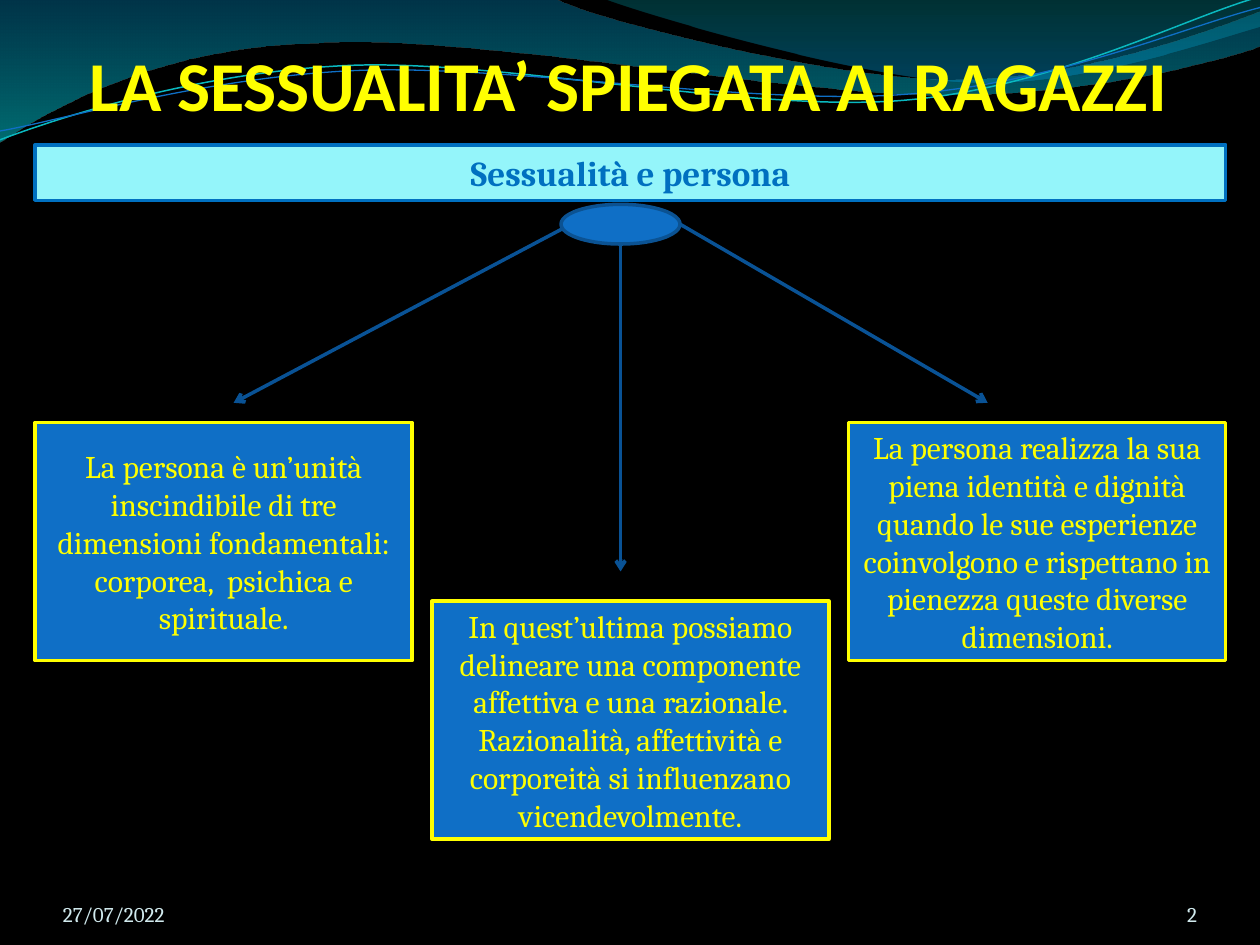
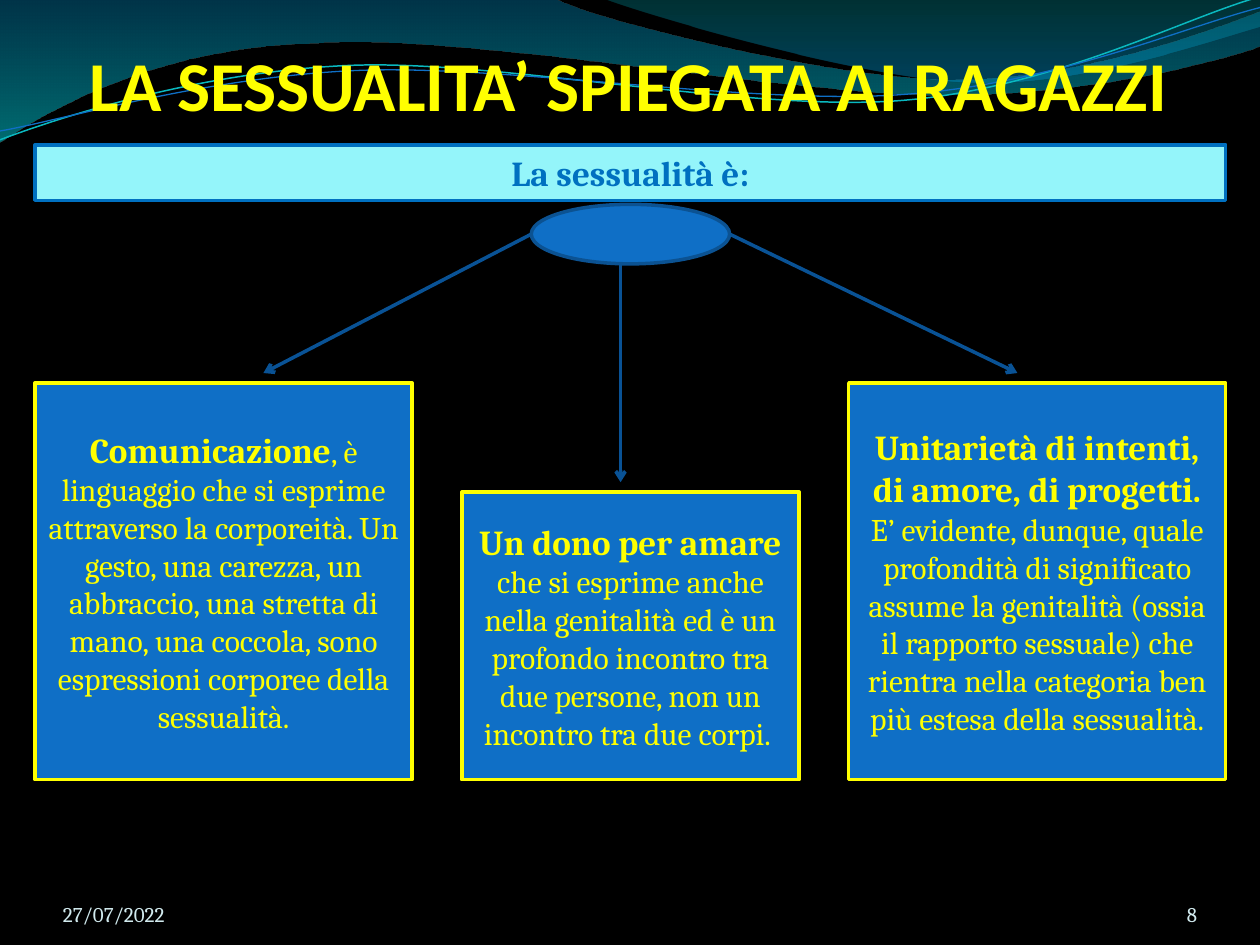
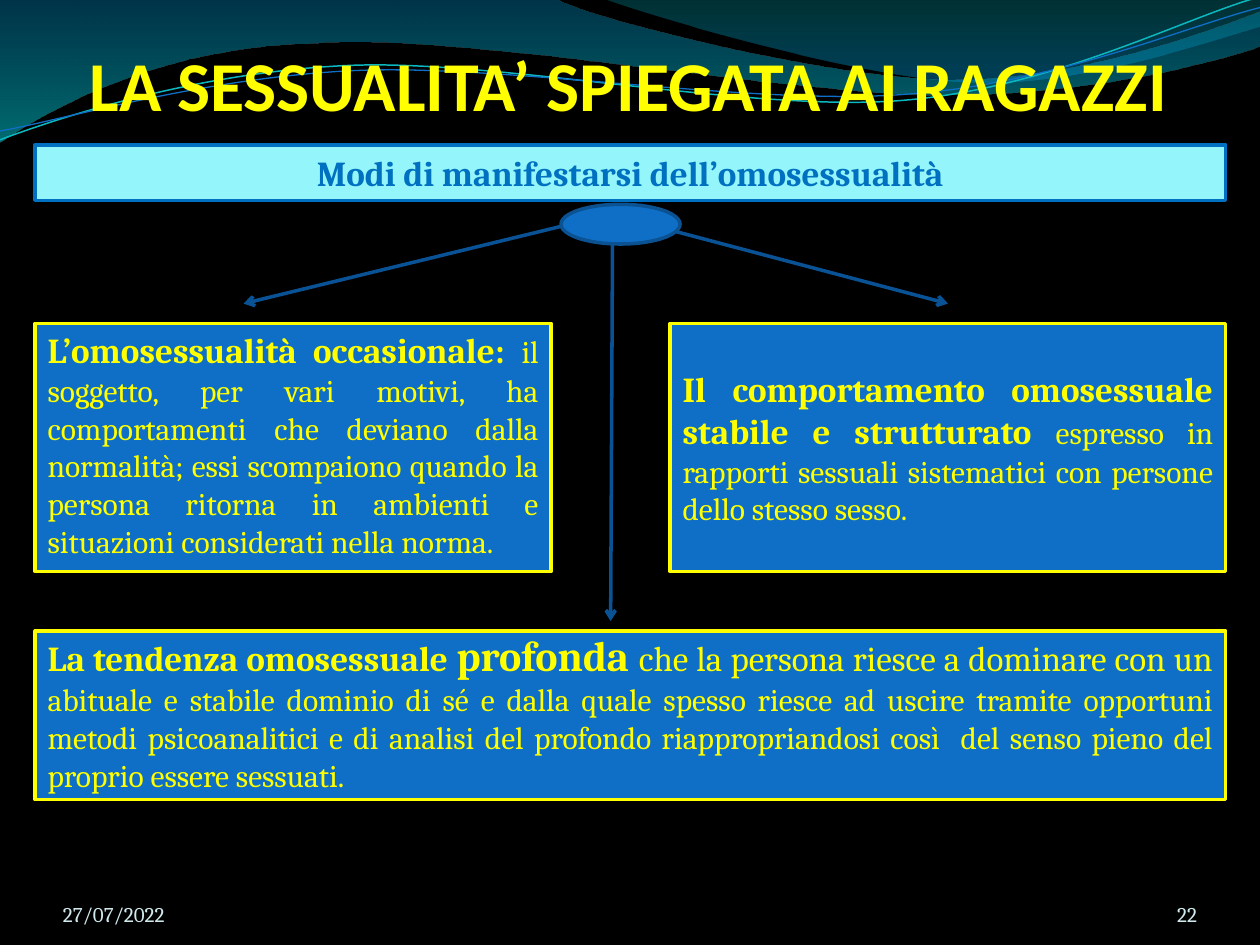
import dataclasses
import lxml.etree
import pptx
import pptx.dml.color
import pptx.enum.shapes
import pptx.enum.text
import pptx.oxml.ns
import pptx.util

SHAPE = pptx.enum.shapes.MSO_SHAPE
ALIGN = pptx.enum.text.PP_ALIGN
ANCHOR = pptx.enum.text.MSO_ANCHOR
qn = pptx.oxml.ns.qn
Inches = pptx.util.Inches
Pt = pptx.util.Pt


@dataclasses.dataclass(frozen=True)
class Theme:
    back: str = "000000"
    title: str = "FFFF00"
    foot: str = "D1EAEE"
    band: str = "94F5FA"
    edge: str = "0070C0"
    fill: str = "0F6FC6"
    rim: str = "0B5292"
    arrow: str = "095295"
    teal: str = "0AB8BF"
    head: str = "Calibri"
    body: str = "Cambria"
    huge: int = 40
    big: int = 24
    lead: int = 20
    text: int = 18
    small: int = 12
    line: int = 2


T = Theme()
CELL = pptx.util.Cm(0.4)
LEFT = pptx.util.Cm(0.71)
TOP = pptx.util.Cm(4.12)
COLS = 60

WAVES = [
    ([(0, 0), (4.4, -0.01), (4.76, 0.17, 6.64, 0.63, 7.58, 0.63),
      (8.53, 0.63, 9.58, 0.26, 10, 0.09), (10.01, 0.36),
      (9.83, 0.44, 8.7, 0.76, 7.46, 0.75), (6.22, 0.75, 3.82, 0.28, 2.57, 0.34),
      (1.29, 0.36, 0.46, 0.83, -0.01, 1.13), (0, 0)],
     [(0, "0074A1", 45), (1, "00C6CF", 55)]),
    ([(4.79, -0.01), (5.09, 0.11, 6.82, 0.62, 7.69, 0.65),
      (8.56, 0.69, 9.61, 0.32, 10, 0.21), (10, 0), (4.79, -0.01)],
     [(0, "00A1A9", 30), (0.8, "008BBF", 45)]),
]
CURVES = [
    ([(0, 1.11), (0.48, 0.93, 1.58, 0.57, 2.77, 0.52),
      (3.95, 0.47, 5.93, 0.89, 7.13, 0.8), (8.33, 0.71, 9.38, 0.15, 9.98, -0.02)],
     T.teal, 0.85),
    ([(0, 1.04), (0.47, 0.96, 1.64, 0.61, 2.83, 0.56),
      (4.03, 0.51, 5.97, 0.84, 7.17, 0.75), (8.36, 0.67, 9.41, 0.21, 10, 0.06)],
     T.fill, 0.75),
]


def rgb(code):
    return pptx.dml.color.RGBColor.from_string(code)


def spot(col, row):
    return LEFT + round(col * CELL), TOP + round(row * CELL)


def area(col, row, wide, high):
    return *spot(col, row), round(wide * CELL), round(high * CELL)


def trace(slide, parts, close):
    points = [(Inches(x), Inches(y)) for part in parts
              for x, y in zip(part[::2], part[1::2])]
    pen = slide.shapes.build_freeform(*points[0])
    pen.add_line_segments(points[1:], close=close)
    shape = pen.convert_to_shape()
    shape.shadow.inherit = False
    lines = iter(list(shape._element.spPr.iter(qn("a:lnTo"))))
    for part in parts[1:]:
        if len(part) == 6:
            first, *rest = next(lines), next(lines), next(lines)
            first.tag = qn("a:cubicBezTo")
            for line in rest:
                first.append(line[0])
                line.getparent().remove(line)
        else:
            next(lines)
    return shape


def wave(slide, parts, stops):
    shape = trace(slide, parts, True)
    shape.line.fill.background()
    shape.fill.gradient()
    shape.fill.gradient_angle = 270
    for stop, (place, color, _) in zip(shape.fill.gradient_stops, stops):
        stop.position = place
        stop.color.rgb = rgb(color)
    tints = list(shape._element.spPr.iter(qn("a:srgbClr")))
    for tint, (_, _, share) in zip(tints, stops):
        lxml.etree.SubElement(tint, qn("a:alpha")).set("val", str(share * 1000))
    return shape


def curve(slide, parts, color, width):
    shape = trace(slide, parts, False)
    shape.fill.background()
    shape.line.color.rgb = rgb(color)
    shape.line.width = Pt(width)
    return shape


def adorn(slide):
    shapes = [wave(slide, *item) for item in WAVES]
    shapes += [curve(slide, *item) for item in CURVES]
    for shape in shapes:
        slide.slide_layout.shapes._spTree.append(shape._element)


def write(shape, runs, color, align=ALIGN.CENTER, anchor=ANCHOR.MIDDLE, font=T.body):
    frame = shape.text_frame
    frame.word_wrap = True
    frame.vertical_anchor = anchor
    para = frame.paragraphs[0]
    para.alignment = align
    para.font.name = font
    para.font.color.rgb = rgb(color)
    if len(runs) == 1:
        para.font.size, para.font.bold = Pt(runs[0][1]), runs[0][2]
    for words, size, bold in runs:
        run = para.add_run()
        run.text = words
        if len(runs) > 1:
            run.font.size, run.font.bold = Pt(size), bold


def label(slide, place, words, size, color, align, font=T.body, bold=False):
    box = slide.shapes.add_textbox(*area(*place))
    frame = box.text_frame
    frame.margin_left = frame.margin_right = 0
    frame.margin_top = frame.margin_bottom = 0
    write(box, [(words, size, bold)], color, align, ANCHOR.BOTTOM, font)


def block(slide, kind, place, fill, edge):
    shape = slide.shapes.add_shape(kind, *area(*place))
    shape.shadow.inherit = False
    shape.fill.solid()
    shape.fill.fore_color.rgb = rgb(fill)
    shape.line.color.rgb = rgb(edge)
    shape.line.width = Pt(T.line)
    return shape


def card(slide, align, place, runs, base=0.05):
    shape = block(slide, SHAPE.RECTANGLE, place, T.fill, T.title)
    shape.text_frame.margin_bottom = Inches(base)
    write(shape, runs, T.title, align)


def arrow(slide, start, end):
    link = slide.shapes.add_connector(
        pptx.enum.shapes.MSO_CONNECTOR.STRAIGHT, *spot(*start), *spot(*end))
    link.line.color.rgb = rgb(T.arrow)
    link.line.width = Pt(T.line)
    lxml.etree.SubElement(link.line._get_or_add_ln(), qn("a:tailEnd")).set("type", "arrow")
    lxml.etree.SubElement(link._element.spPr, qn("a:effectLst"))


def scheme(deck, number, topic, cards, arrows, hub, align=ALIGN.CENTER):
    slide = deck.slides.add_slide(deck.slide_layouts[6])
    if len(deck.slides) == 1:
        adorn(slide)
    label(slide, (0, -8.45, 59.8, 4.5), "LA SESSUALITA’ SPIEGATA AI RAGAZZI",
          T.huge, T.title, ALIGN.CENTER, T.head, True)
    label(slide, (1.4, 33.85, 14.8, 2.55), "27/07/2022", T.small, T.foot, ALIGN.LEFT)
    label(slide, (53.25, 33.85, 5.3, 2.55), number, T.small, T.foot, ALIGN.RIGHT)
    band = block(slide, SHAPE.RECTANGLE, (0, -3, COLS, 2.8), T.band, T.edge)
    write(band, [(topic, T.lead, True)], T.edge)
    for item in cards:
        card(slide, align, *item)
    for start, end in arrows:
        arrow(slide, start, end)
    block(slide, SHAPE.OVAL, hub, T.fill, T.rim)


def lead(words):
    return words, T.lead, True


def plain(words, size=T.text):
    return words, size, False


def main():
    deck = pptx.Presentation()
    deck.slide_width, deck.slide_height = Inches(10), Inches(7.5)
    back = deck.slide_master.background.fill
    back.solid()
    back.fore_color.rgb = rgb(T.back)
    small = (26.5, 0, 6, 2)

    scheme(deck, "2", "Sessualità e persona", [
        ((0, 11, 19, 12), [plain(
            "La persona è un’unità inscindibile di tre dimensioni fondamentali: "
            "corporea,  psichica e spirituale.")]),
        ((20, 20, 20, 12), [plain(
            "In quest’ultima possiamo delineare una componente affettiva e una "
            "razionale. Razionalità, affettività e corporeità si influenzano "
            "vicendevolmente.")]),
        ((41, 11, 19, 12), [plain(
            "La persona realizza la sua piena identità e dignità quando le sue "
            "esperienze coinvolgono e rispettano in pienezza queste diverse "
            "dimensioni.")]),
    ], [((27, 1), (10, 10)), ((29.5, 1.5), (29.5, 18.5)), ((32.5, 1), (48, 10))], small)

    scheme(deck, "8", "La sessualità è:", [
        ((0, 9, 19, 20), [lead("Comunicazione"), plain(
            ", è linguaggio che si esprime attraverso la corporeità. Un gesto, una "
            "carezza, un abbraccio, una stretta di mano, una coccola, sono "
            "espressioni corporee della sessualità.")]),
        ((21.5, 14.5, 17, 14.5), [lead("Un dono per amare"), plain(
            " che si esprime anche nella genitalità ed è un profondo incontro tra "
            "due persone, non un incontro tra due corpi. ")]),
        ((41, 9, 19, 20), [lead("Unitarietà di intenti, di amore, di progetti. "), plain(
            "E’ evidente, dunque, quale profondità di significato assume la "
            "genitalità (ossia il rapporto sessuale) che rientra nella categoria "
            "ben più estesa della sessualità.")]),
    ], [((25, 1.5), (11.5, 8.5)), ((29.5, 0.5), (29.5, 14)), ((35, 1.5), (49.5, 8.5))],
        (25, 0, 10, 3))

    scheme(deck, "22", "Modi di manifestarsi dell’omosessualità", [
        ((0, 6, 26, 12.5), [lead("L’omosessualità occasionale: "), plain(
            "il soggetto, per vari motivi, ha comportamenti che deviano dalla "
            "normalità; essi scompaiono quando la persona ritorna in ambienti e "
            "situazioni considerati nella norma.")], 0.1),
        ((32, 6, 28, 12.5), [lead("Il comportamento omosessuale stabile e strutturato "), plain(
            "espresso in rapporti sessuali sistematici con persone dello stesso "
            "sesso. ")]),
        ((0, 21.5, COLS, 8.5), [
            lead("La tendenza omosessuale "), ("profonda ", T.big, True),
            plain("che la persona riesce a dominare con un ", T.lead), plain(
                "abituale e stabile dominio di sé e dalla quale spesso riesce ad "
                "uscire tramite opportuni metodi psicoanalitici e di analisi del "
                "profondo riappropriandosi così  del senso pieno del proprio essere "
                "sessuati.")], 0.11),
    ], [((29, 0.5), (10.5, 5)), ((29.1, 0.5), (29, 21)), ((29, 0.5), (46, 5))],
        small, ALIGN.JUSTIFY)

    deck.save("out.pptx")


if __name__ == "__main__":
    main()
